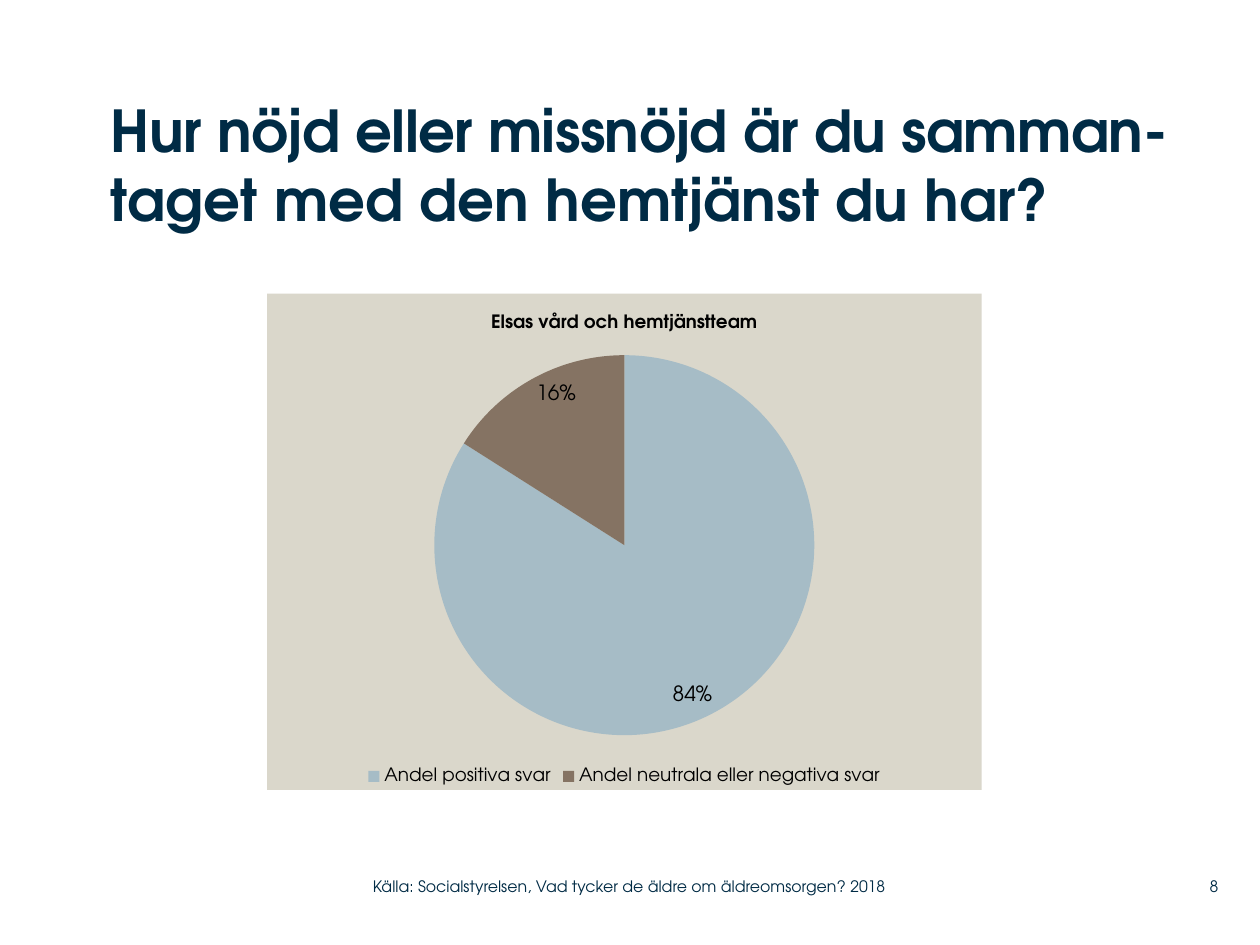
from lxml.etree import fromstring
from pptx import Presentation
from pptx.chart.data import CategoryChartData
from pptx.dml.color import RGBColor
from pptx.enum.chart import XL_CHART_TYPE as ChartType
from pptx.enum.chart import XL_LABEL_POSITION as LabelPosition
from pptx.enum.chart import XL_LEGEND_POSITION as LegendPosition
from pptx.enum.text import MSO_ANCHOR as Anchor
from pptx.enum.text import PP_ALIGN as Align
from pptx.oxml.ns import nsdecls
from pptx.util import Inches, Pt

FONT = "TeX Gyre Adventor"
NAVY, BLACK, SAND = "002B45", "000000", "DAD7CB"

TITLE_LINES = ["Hur nöjd eller missnöjd är du samman-", "taget med den hemtjänst du har?"]
SOURCE = "Källa: Socialstyrelsen, Vad tycker de äldre om äldreomsorgen? 2018"
PAGE_NUMBER = "8"
CHART_TITLE = "Elsas vård och hemtjänstteam"
ANSWERS = [
    ("Andel positiva svar", 84, "A6BCC6"),
    ("Andel neutrala eller negativa svar", 16, "857363"),
]
PIE_AREA = {"x": 0.234, "y": 0.124, "w": 0.532, "h": 0.766}  # shares of the chart
FOOTER_TOP, FOOTER_HEIGHT = 6.89, 0.29


def color(value):
    return RGBColor.from_string(value)


def style(font, size, ink=BLACK, bold=False):
    font.name, font.size, font.bold = FONT, Pt(size), bold
    font.color.rgb = color(ink)


def add_text(page, text, left, top, width, height, size=9, bold=False,
             align=Align.LEFT, anchor=Anchor.MIDDLE):
    box = page.shapes.add_textbox(*map(Inches, (left, top, width, height)))
    frame = box.text_frame
    frame.word_wrap = True
    frame.vertical_anchor = anchor
    frame.margin_left = frame.margin_right = frame.margin_top = frame.margin_bottom = 0
    para = frame.paragraphs[0]
    para.text = text
    para.alignment = align
    for span in para.runs:
        style(span.font, size, NAVY, bold)
    return para


def fill_background(chart, fill):
    """Give the whole chart area a plain fill without an outline."""
    area = fromstring(
        f'<c:spPr {nsdecls("c", "a")}><a:solidFill><a:srgbClr val="{fill}"/></a:solidFill>'
        "<a:ln><a:noFill/></a:ln></c:spPr>")
    chart.element.find("{*}chart").addnext(area)


def place_plot(chart, area):
    plot_area = chart.element.find(".//{*}plotArea")
    for layout in plot_area.findall("{*}layout"):
        plot_area.remove(layout)
    modes = '<c:xMode val="edge"/><c:yMode val="edge"/>'
    shares = "".join(f'<c:{key} val="{share}"/>' for key, share in area.items())
    plot_area.insert(0, fromstring(
        f'<c:layout {nsdecls("c")}><c:manualLayout><c:layoutTarget val="inner"/>'
        f"{modes}{shares}</c:manualLayout></c:layout>"))


def add_pie(page, left, top, width, height):
    names, values, fills = zip(*ANSWERS)
    data = CategoryChartData()
    data.categories = names
    data.add_series("Series 1", values)
    chart = page.shapes.add_chart(
        ChartType.PIE, *map(Inches, (left, top, width, height)), data).chart
    style(chart.font, 18)

    chart.has_title = True
    chart.chart_title.include_in_layout = False
    heading = chart.chart_title.text_frame
    heading.text = CHART_TITLE
    style(heading.paragraphs[0].runs[0].font, 10.5, bold=True)

    chart.has_legend = True
    chart.legend.position = LegendPosition.BOTTOM
    chart.legend.include_in_layout = False
    style(chart.legend.font, 10.5)

    plot = chart.plots[0]
    plot.vary_by_categories = True
    for index, fill in enumerate(fills):
        slice_format = plot.series[0].points[index].format
        slice_format.fill.solid()
        slice_format.fill.fore_color.rgb = color(fill)
        slice_format.line.fill.background()

    plot.has_data_labels = True
    labels = plot.data_labels
    labels.show_percentage, labels.show_value = True, False
    labels.number_format, labels.number_format_is_linked = "0%", False
    labels.position = LabelPosition.INSIDE_END
    style(labels.font, 12)

    fill_background(chart, SAND)
    place_plot(chart, PIE_AREA)


def main():
    deck = Presentation()
    deck.slide_width, deck.slide_height = Inches(10), Inches(7.5)
    page = deck.slides.add_slide(deck.slide_layouts[6])

    add_text(page, PAGE_NUMBER, 9.2, FOOTER_TOP, 0.47, FOOTER_HEIGHT, align=Align.RIGHT)
    add_text(page, SOURCE, 2.96, FOOTER_TOP, 4.43, FOOTER_HEIGHT)
    title = add_text(page, "\v".join(TITLE_LINES), 0.88, 0.75, 8.94, 1.42,
                     size=33, bold=True, anchor=Anchor.TOP)
    title.runs[0].font._element.set("spc", "-30")
    add_pie(page, 2.12, 2.33, 5.67, 3.94)

    deck.save("out.pptx")


if __name__ == "__main__":
    main()
